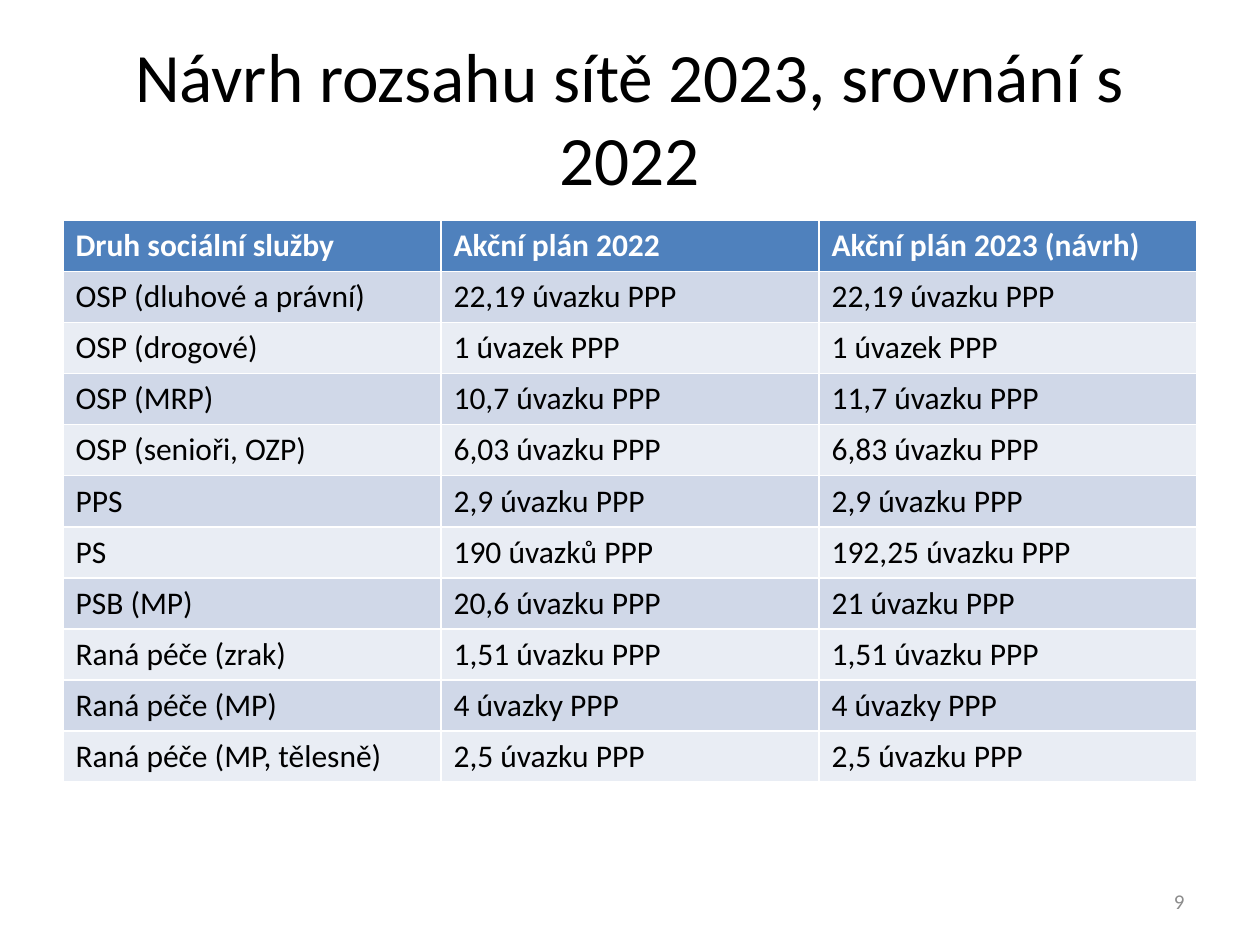
import pptx
import pptx.util
import pptx.dml.color
import pptx.enum.text
from pptx.util import Inches

BLACK = pptx.dml.color.RGBColor(0x00, 0x00, 0x00)
WHITE = pptx.dml.color.RGBColor(0xFF, 0xFF, 0xFF)
GRAY = pptx.dml.color.RGBColor(0x8C, 0x8C, 0x8C)
HEADER_BLUE = pptx.dml.color.RGBColor(0x4F, 0x81, 0xBD)
BAND_DARK = pptx.dml.color.RGBColor(0xD0, 0xD8, 0xE8)
BAND_LIGHT = pptx.dml.color.RGBColor(0xE9, 0xED, 0xF4)

ROWS = [
    ("Druh sociální služby", "Akční plán 2022", "Akční plán 2023 (návrh)"),
    ("OSP (dluhové a právní)", "22,19 úvazku PPP", "22,19 úvazku PPP"),
    ("OSP (drogové)", "1 úvazek PPP", "1 úvazek PPP"),
    ("OSP (MRP)", "10,7 úvazku PPP", "11,7 úvazku PPP"),
    ("OSP (senioři, OZP)", "6,03 úvazku PPP", "6,83 úvazku PPP"),
    ("PPS", "2,9 úvazku PPP", "2,9 úvazku PPP"),
    ("PS", "190 úvazků PPP", "192,25 úvazku PPP"),
    ("PSB (MP)", "20,6 úvazku PPP", "21 úvazku PPP"),
    ("Raná péče (zrak)", "1,51 úvazku PPP", "1,51 úvazku PPP"),
    ("Raná péče (MP)", "4 úvazky PPP", "4 úvazky PPP"),
    ("Raná péče (MP, tělesně)", "2,5 úvazku PPP", "2,5 úvazku PPP"),
]


def format_text(text_frame, size, color, bold=False):
    for run in text_frame.paragraphs[0].runs:
        run.font.name = "Calibri"
        run.font.size = pptx.util.Pt(size)
        run.font.color.rgb = color
        run.font.bold = bold


def add_text(slide, text, left, top, width, height, size, color, alignment):
    text_frame = slide.shapes.add_textbox(
        Inches(left), Inches(top), Inches(width), Inches(height)).text_frame
    text_frame.word_wrap = True
    text_frame.vertical_anchor = pptx.enum.text.MSO_ANCHOR.MIDDLE
    text_frame.text = text
    text_frame.paragraphs[0].alignment = alignment
    format_text(text_frame, size, color)


presentation = pptx.Presentation()
presentation.slide_width = Inches(10)
presentation.slide_height = Inches(7.5)
slide = presentation.slides.add_slide(presentation.slide_layouts[6])

# Title
add_text(slide, "Návrh rozsahu sítě 2023, srovnání s 2022", 0.5, 0.3, 9, 1.25,
         39.6, BLACK, pptx.enum.text.PP_ALIGN.CENTER)

# Comparison table; the default table style draws the white borders
table = slide.shapes.add_table(
    len(ROWS), len(ROWS[0]), Inches(0.5), Inches(1.75), Inches(9), Inches(4.46)).table
for row_index, row in enumerate(ROWS):
    is_header = row_index == 0
    band = BAND_DARK if row_index % 2 else BAND_LIGHT
    for column_index, text in enumerate(row):
        cell = table.cell(row_index, column_index)
        cell.fill.solid()
        cell.fill.fore_color.rgb = HEADER_BLUE if is_header else band
        cell.text_frame.text = text
        format_text(cell.text_frame, 18, WHITE if is_header else BLACK, is_header)

# Slide number
add_text(slide, "9", 7.17, 6.95, 2.33, 0.4, 12, GRAY,
         pptx.enum.text.PP_ALIGN.RIGHT)

presentation.save("out.pptx")
